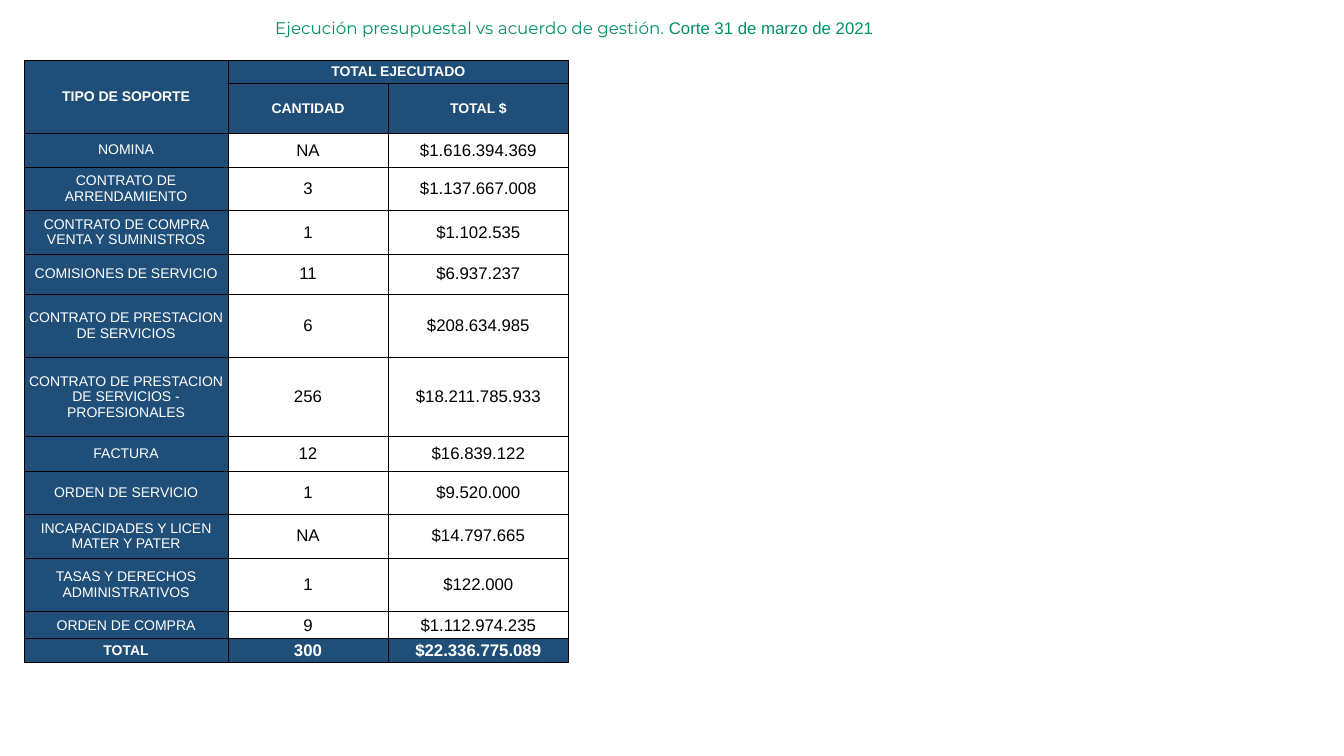
from dataclasses import dataclass

from lxml.etree import SubElement
from pptx import Presentation
from pptx.dml.color import RGBColor as RGB
from pptx.enum.text import MSO_ANCHOR as ANCHOR, MSO_AUTO_SIZE as AUTO_SIZE, PP_ALIGN as ALIGN
from pptx.oxml.ns import qn
from pptx.util import Inches, Pt


@dataclass(frozen=True)
class Theme:
    green: str = "009267"
    navy: str = "1F4E78"
    white: str = "FFFFFF"
    black: str = "000000"
    body_font: str = "Arial"
    title_font: str = "Montserrat"
    large: int = 12
    small: int = 10
    border: float = 0.5


THEME = Theme()
TITLE = [
    ("Ejecución presupuestal vs acuerdo de gestión. ", THEME.title_font),
    ("Corte 31 de marzo de 2021", THEME.body_font),
]
COLUMN_WIDTHS = [2.02, 1.59, 1.79]
HEADER_COUNT = 2
ROWS = [
    (0.23, "TIPO DE SOPORTE", "TOTAL EJECUTADO", ""),
    (0.49, "", "CANTIDAD", "TOTAL $"),
    (0.34, "NOMINA", "NA", "$1.616.394.369"),
    (0.43, "CONTRATO DE ARRENDAMIENTO", "3", "$1.137.667.008"),
    (0.43, "CONTRATO DE COMPRA VENTA Y SUMINISTROS", "1", "$1.102.535"),
    (0.4, "COMISIONES DE SERVICIO", "11", "$6.937.237"),
    (0.63, "CONTRATO DE PRESTACION DE SERVICIOS", "6", "$208.634.985"),
    (0.78, "CONTRATO DE PRESTACION DE SERVICIOS - PROFESIONALES", "256", "$18.211.785.933"),
    (0.35, "FACTURA", "12", "$16.839.122"),
    (0.42, "ORDEN DE SERVICIO", "1", "$9.520.000"),
    (0.44, "INCAPACIDADES Y LICEN MATER Y PATER", "NA", "$14.797.665"),
    (0.53, "TASAS Y DERECHOS ADMINISTRATIVOS", "1", "$122.000"),
    (0.27, "ORDEN DE COMPRA", "9", "$1.112.974.235"),
    (0.23, "TOTAL", "300", "$22.336.775.089"),
]


def style_font(font, name, size, color, bold=False):
    font.name = name
    font.size = Pt(size)
    font.bold = bold
    font.color.rgb = RGB.from_string(color)


def add_title(slide, left, top, width, height):
    sp = slide.shapes.title
    sp.left, sp.top, sp.width, sp.height = map(Inches, (left, top, width, height))
    tf = sp.text_frame
    tf.word_wrap = True
    tf.auto_size = AUTO_SIZE.SHAPE_TO_FIT_TEXT
    tf.vertical_anchor = ANCHOR.TOP
    p = tf.paragraphs[0]
    p.alignment = ALIGN.LEFT
    for text, font_name in TITLE:
        r = p.add_run()
        r.text = text
        style_font(r.font, font_name, THEME.large, THEME.green)


def add_borders(cell):
    tc_pr = cell._tc.get_or_add_tcPr()
    for side in ("a:lnL", "a:lnR", "a:lnT", "a:lnB"):
        line = SubElement(tc_pr, qn(side), w=str(Pt(THEME.border)))
        fill = SubElement(line, qn("a:solidFill"))
        SubElement(fill, qn("a:srgbClr"), val=THEME.black)


def style_cell(cell, text, size, bold, dark):
    add_borders(cell)
    cell.fill.solid()
    cell.fill.fore_color.rgb = RGB.from_string(THEME.navy if dark else THEME.white)
    cell.margin_left = cell.margin_right = cell.margin_top = cell.margin_bottom = 0
    cell.vertical_anchor = ANCHOR.MIDDLE
    p = cell.text_frame.paragraphs[0]
    p.text = text
    p.alignment = ALIGN.CENTER
    style_font(p.font, THEME.body_font, size, THEME.white if dark else THEME.black, bold)
    for r in p.runs:
        style_font(r.font, THEME.body_font, size, THEME.white if dark else THEME.black, bold)


def add_budget_table(slide, left, top, width, height):
    frame = slide.shapes.add_table(
        len(ROWS), len(COLUMN_WIDTHS), Inches(left), Inches(top), Inches(width), Inches(height)
    )
    table = frame.table
    table.first_row = table.horz_banding = False
    for column, share in zip(table.columns, COLUMN_WIDTHS):
        column.width = Inches(width * share / sum(COLUMN_WIDTHS))
    total_height = sum(row[0] for row in ROWS)
    for i, (share, *texts) in enumerate(ROWS):
        table.rows[i].height = Inches(height * share / total_height)
        is_header = i < HEADER_COUNT
        is_total = i == len(ROWS) - 1
        for j, text in enumerate(texts):
            is_label = is_header or j == 0
            size = THEME.small if is_label else THEME.large
            style_cell(table.cell(i, j), text, size, is_header or is_total, is_label or is_total)
    table.cell(0, 0).merge(table.cell(1, 0))
    table.cell(0, 1).merge(table.cell(0, 2))


def main():
    prs = Presentation()
    prs.slide_width, prs.slide_height = Inches(13.33), Inches(7.5)
    slide = prs.slides.add_slide(prs.slide_layouts.get_by_name("Title Only"))
    add_title(slide, 2.63, 0.13, 10.7, 0.3)
    add_budget_table(slide, 0.24, 0.6, 5.4, 5.97)
    prs.save("out.pptx")


if __name__ == "__main__":
    main()
